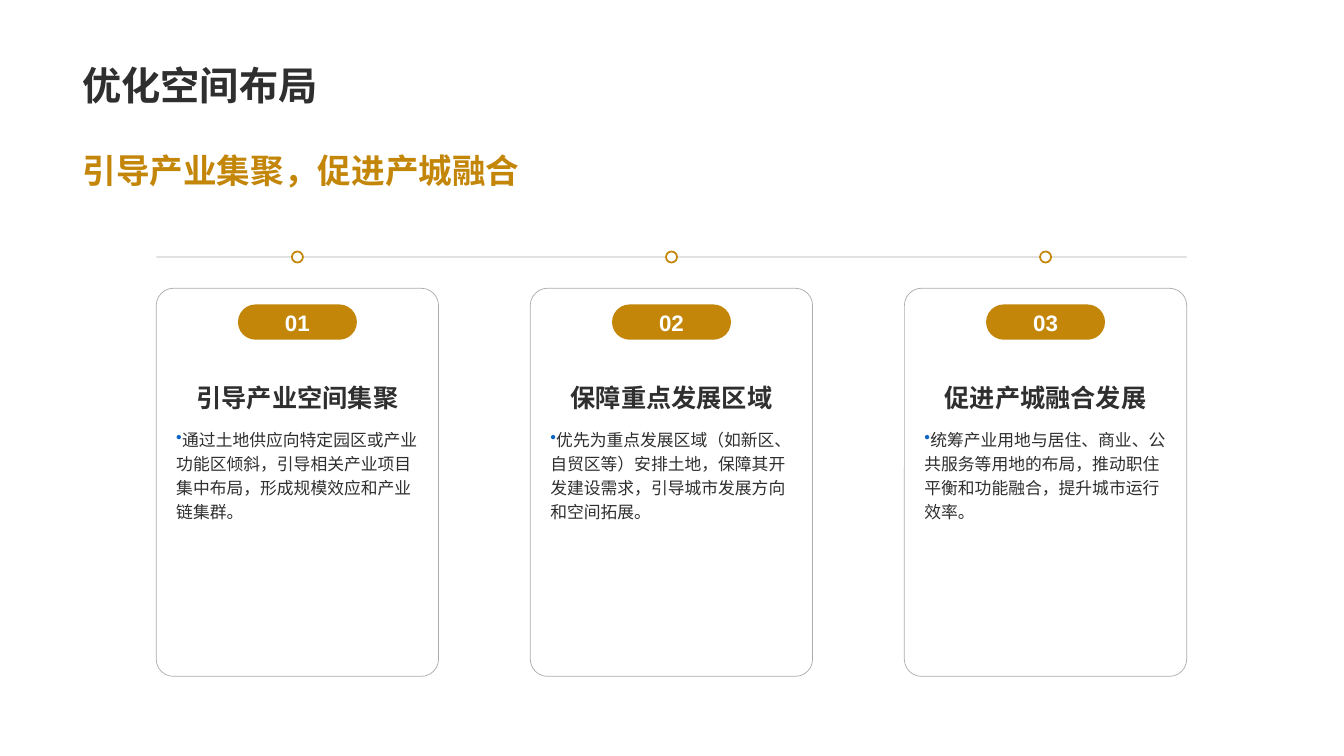
from dataclasses import dataclass

from lxml import etree
from pptx import Presentation
from pptx.dml.color import RGBColor
from pptx.enum.shapes import MSO_CONNECTOR, MSO_SHAPE
from pptx.enum.text import MSO_ANCHOR, PP_ALIGN
from pptx.oxml.ns import qn
from pptx.util import Inches, Pt

ROUNDED, OVAL = MSO_SHAPE.ROUNDED_RECTANGLE, MSO_SHAPE.OVAL
STRAIGHT = MSO_CONNECTOR.STRAIGHT
TOP, MIDDLE, BOTTOM = MSO_ANCHOR.TOP, MSO_ANCHOR.MIDDLE, MSO_ANCHOR.BOTTOM
LEFT, CENTER = PP_ALIGN.LEFT, PP_ALIGN.CENTER


@dataclass(frozen=True)
class Theme:
    ink: str = "2F2F2F"
    gold: str = "C38609"
    blue: str = "0D66C4"
    white: str = "FFFFFF"
    text_font: str = "Noto Sans CJK SC"
    number_font: str = "Arial"
    title_size: int = 28
    subtitle_size: int = 24
    heading_size: int = 18
    number_size: int = 16
    body_size: int = 12
    hairline: float = 0.5
    ring: float = 1.25
    line_alpha: int = 40


CARDS = [
    ("引导产业空间集聚",
     "通过土地供应向特定园区或产业功能区倾斜，引导相关产业项目集中布局，形成规模效应和产业链集群。"),
    ("保障重点发展区域",
     "优先为重点发展区域（如新区、自贸区等）安排土地，保障其开发建设需求，引导城市发展方向和空间拓展。"),
    ("促进产城融合发展",
     "统筹产业用地与居住、商业、公共服务等用地的布局，推动职住平衡和功能融合，提升城市运行效率。"),
]
CARD_LEFT, CARD_TOP, CARD_WIDTH, CARD_HEIGHT = 1.55, 2.86, 2.8, 3.85
CARD_STEP = 3.71
CARD_PADDING = 0.1
TIMELINE_Y = 2.55
BADGE_WIDTH, BADGE_HEIGHT = 1.18, 0.35
DOT_SIZE = 0.11


def write_text(shape, text, *, size, color, font, bold=False, align=LEFT,
               anchor=TOP, wrap=True, bullet_color=None):
    frame = shape.text_frame
    frame.word_wrap = wrap
    frame.vertical_anchor = anchor
    paragraph = frame.paragraphs[0]
    paragraph.alignment = align
    if bullet_color:
        paragraph.line_spacing = 1.2
        paragraph.space_after = Pt(6)
        properties = paragraph._p.get_or_add_pPr()
        bullet = etree.SubElement(properties, qn("a:buClr"))
        etree.SubElement(bullet, qn("a:srgbClr"), val=bullet_color)
        etree.SubElement(properties, qn("a:buChar"), char="•")
    run = paragraph.add_run()
    run.text = text
    run.font.size = Pt(size)
    run.font.bold = bold
    run.font.color.rgb = RGBColor.from_string(color)
    run.font.name = font
    etree.SubElement(run._r.get_or_add_rPr(), qn("a:ea"), typeface=font)


class SlideBuilder:
    def __init__(self, slide, theme):
        self.slide = slide
        self.theme = theme

    def style_line(self, line, color, width, alpha=None):
        line.color.rgb = RGBColor.from_string(color)
        line.width = Pt(width)
        if alpha is not None:
            color_element = line._ln.find(".//" + qn("a:srgbClr"))
            etree.SubElement(color_element, qn("a:alpha"), val=str(alpha * 1000))

    def text(self, text, left, top, width, height, **text_format):
        box = self.slide.shapes.add_textbox(
            Inches(left), Inches(top), Inches(width), Inches(height))
        text_format = {"color": self.theme.ink, "font": self.theme.text_font,
                       **text_format}
        write_text(box, text, **text_format)

    def shape(self, kind, left, top, width, height, fill=None, rounding=None):
        shape = self.slide.shapes.add_shape(
            kind, Inches(left), Inches(top), Inches(width), Inches(height))
        shape.shadow.inherit = False
        if rounding is not None:
            shape.adjustments[0] = rounding
        if fill:
            shape.fill.solid()
            shape.fill.fore_color.rgb = RGBColor.from_string(fill)
        else:
            shape.fill.background()
        shape.line.fill.background()
        return shape

    def timeline(self, left, right, y):
        line = self.slide.shapes.add_connector(
            STRAIGHT, Inches(left), Inches(y), Inches(right), Inches(y))
        self.style_line(line.line, self.theme.ink, self.theme.hairline,
                        self.theme.line_alpha)
        etree.SubElement(line._element.spPr, qn("a:effectLst"))

    def badge(self, number, center):
        theme = self.theme
        badge = self.shape(ROUNDED, center - BADGE_WIDTH / 2, 3.02, BADGE_WIDTH,
                           BADGE_HEIGHT, fill=theme.gold, rounding=0.5)
        frame = badge.text_frame
        frame.margin_left = frame.margin_right = 0
        frame.margin_top = frame.margin_bottom = 0
        write_text(badge, f"{number:02d}", size=theme.number_size,
                   color=theme.white, font=theme.number_font, bold=True,
                   align=CENTER, anchor=MIDDLE, wrap=False)

    def dot(self, center):
        dot = self.shape(OVAL, center - DOT_SIZE / 2, TIMELINE_Y - DOT_SIZE / 2,
                         DOT_SIZE, DOT_SIZE, fill=self.theme.white)
        self.style_line(dot.line, self.theme.gold, self.theme.ring)

    def card(self, number, left, heading, body):
        theme = self.theme
        outline = self.shape(ROUNDED, left, CARD_TOP, CARD_WIDTH, CARD_HEIGHT,
                             rounding=0.061)
        self.style_line(outline.line, theme.ink, theme.hairline, theme.line_alpha)
        text_left = left + CARD_PADDING
        text_width = CARD_WIDTH - 2 * CARD_PADDING
        self.text(heading, text_left, 3.42, text_width, 0.72,
                  size=theme.heading_size, bold=True, align=CENTER, anchor=BOTTOM)
        self.text(body, text_left, 4.17, text_width, 2.42,
                  size=theme.body_size, bullet_color=theme.blue)
        center = left + CARD_WIDTH / 2
        self.badge(number, center)
        self.dot(center)


def main():
    presentation = Presentation()
    presentation.slide_width = Inches(13.33)
    presentation.slide_height = Inches(7.5)
    slide = presentation.slides.add_slide(presentation.slide_layouts[6])
    theme = Theme()
    builder = SlideBuilder(slide, theme)

    # Title and subtitle
    builder.text("优化空间布局", 0.72, 0.14, 11.88, 0.98,
                 size=theme.title_size, bold=True, anchor=BOTTOM)
    builder.text("引导产业集聚，促进产城融合", 0.72, 1.24, 11.88, 0.9,
                 size=theme.subtitle_size, color=theme.gold, bold=True,
                 anchor=MIDDLE)

    # Timeline above the cards
    timeline_right = CARD_LEFT + (len(CARDS) - 1) * CARD_STEP + CARD_WIDTH
    builder.timeline(CARD_LEFT, timeline_right, TIMELINE_Y)

    # Numbered cards
    for index, (heading, body) in enumerate(CARDS):
        builder.card(index + 1, CARD_LEFT + index * CARD_STEP, heading, body)

    presentation.save("out.pptx")


if __name__ == "__main__":
    main()
